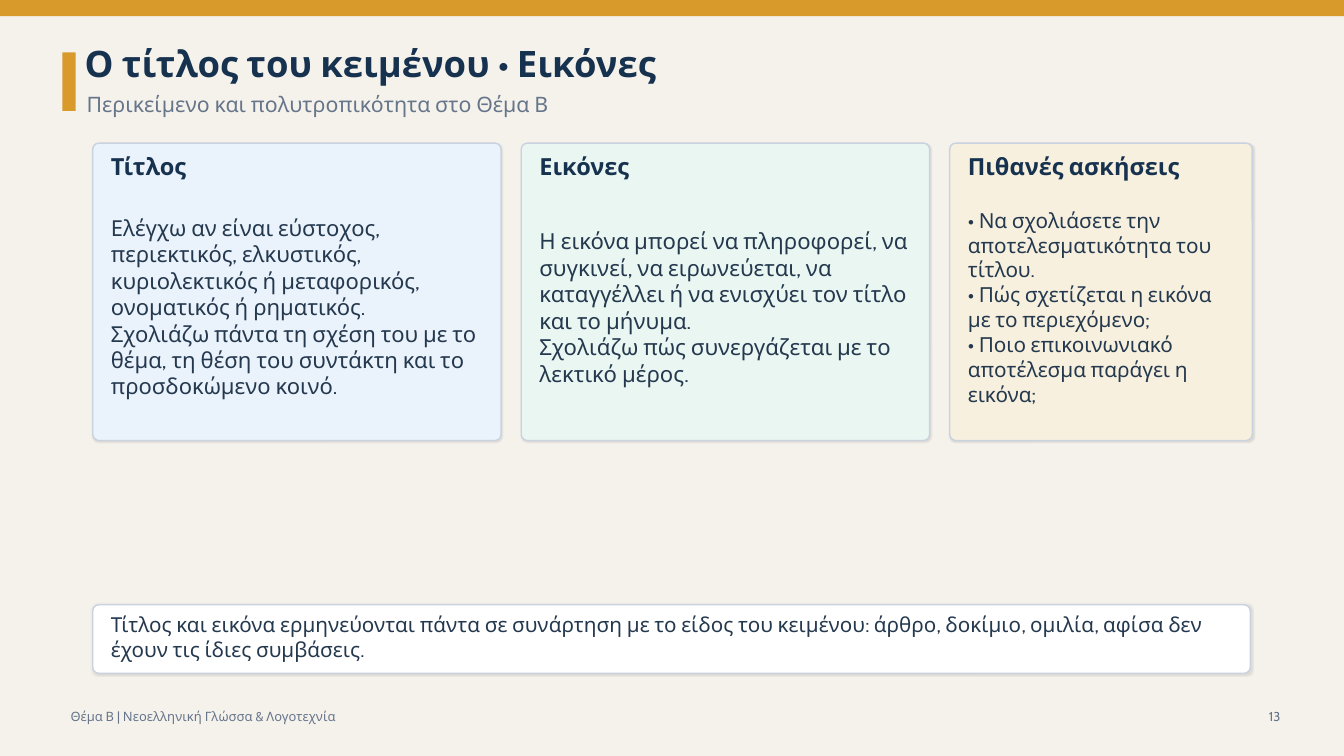
from lxml import etree
from pptx import Presentation
from pptx.dml.color import RGBColor
from pptx.enum.shapes import MSO_SHAPE as Shape
from pptx.enum.text import MSO_ANCHOR as Anchor, PP_ALIGN as Align
from pptx.oxml.ns import qn
from pptx.util import Pt

PX = 9144  # 100 px to the inch
FONT = "Cabin"

PAPER = RGBColor(0xF5, 0xF2, 0xEC)
GOLD = RGBColor(0xD8, 0x9A, 0x2B)
NAVY = RGBColor(0x16, 0x32, 0x4F)
INK = RGBColor(0x24, 0x38, 0x4E)
GREY = RGBColor(0x66, 0x75, 0x8A)
BORDER = RGBColor(0xC9, 0xD3, 0xDF)
BLUE = RGBColor(0xEA, 0xF2, 0xFB)
GREEN = RGBColor(0xEA, 0xF6, 0xF1)
CREAM = RGBColor(0xF7, 0xF0, 0xDE)
WHITE = RGBColor(0xFF, 0xFF, 0xFF)

MARGIN, GAP, PAD, RADIUS = 92, 20, 18, 6
CARD_TOP, CARD_HEIGHT = 142, 295

# Width, fill, heading, body size, body paragraphs
CARDS = [
    (405, BLUE, "Τίτλος", 15.7, [
        "Ελέγχω αν είναι εύστοχος, περιεκτικός, ελκυστικός, κυριολεκτικός ή "
        "μεταφορικός, ονοματικός ή ρηματικός.",
        "Σχολιάζω πάντα τη σχέση του με το θέμα, τη θέση του συντάκτη και το "
        "προσδοκώμενο κοινό."]),
    (405, GREEN, "Εικόνες", 15.8, [
        "Η εικόνα μπορεί να πληροφορεί, να συγκινεί, να ειρωνεύεται, να "
        "καταγγέλλει ή να ενισχύει τον τίτλο και το μήνυμα.",
        "Σχολιάζω πώς συνεργάζεται με το λεκτικό μέρος."]),
    (300, CREAM, "Πιθανές ασκήσεις", 14.8, [
        "• Να σχολιάσετε την αποτελεσματικότητα του τίτλου.",
        "• Πώς σχετίζεται η εικόνα με το περιεχόμενο;",
        "• Ποιο επικοινωνιακό αποτέλεσμα παράγει η εικόνα;"]),
]


def emu(*lengths):
    return [length * PX for length in lengths]


def add_text(slide, box, *paragraphs, size, color, bold=False, align=Align.LEFT):
    frame = slide.shapes.add_textbox(*emu(*box)).text_frame
    frame.word_wrap = True
    frame.vertical_anchor = Anchor.MIDDLE
    frame.margin_left = frame.margin_right = 0
    frame.margin_top = frame.margin_bottom = 0
    for index, wording in enumerate(paragraphs):
        paragraph = frame.add_paragraph() if index else frame.paragraphs[0]
        paragraph.alignment = align
        run = paragraph.add_run()
        run.text = wording
        run.font.name = FONT
        run.font.size = Pt(size)
        run.font.bold = bold
        run.font.color.rgb = color


def add_bar(slide, box, fill):
    bar = slide.shapes.add_shape(Shape.RECTANGLE, *emu(*box))
    bar.shadow.inherit = False
    bar.fill.solid()
    bar.fill.fore_color.rgb = fill
    bar.line.fill.background()


def add_soft_shadow(panel):
    panel.shadow.inherit = False
    effects = panel.element.spPr.find(qn("a:effectLst"))
    shadow = etree.SubElement(effects, qn("a:outerShdw"), blurRad=str(Pt(1.2)),
                              dist=str(Pt(0.5)), dir="2700000",
                              algn="bl", rotWithShape="0")
    black = etree.SubElement(shadow, qn("a:srgbClr"), val="000000")
    etree.SubElement(black, qn("a:alpha"), val="10000")


def add_panel(slide, box, fill):
    panel = slide.shapes.add_shape(Shape.ROUNDED_RECTANGLE, *emu(*box))
    panel.adjustments[0] = RADIUS / min(box[2:])
    panel.fill.solid()
    panel.fill.fore_color.rgb = fill
    panel.line.color.rgb = BORDER
    panel.line.width = Pt(1)
    add_soft_shadow(panel)


def add_card(slide, left, width, fill, heading, size, body):
    add_panel(slide, (left, CARD_TOP, width, CARD_HEIGHT), fill)
    text_left, text_width = left + PAD, width - 2 * PAD
    add_text(slide, (text_left, CARD_TOP + 12, text_width, 22), heading,
             size=16.8, color=NAVY, bold=True)
    add_text(slide, (text_left, CARD_TOP + 42, text_width, CARD_HEIGHT - 54), *body,
             size=size, color=INK)


def main():
    deck = Presentation()
    deck.slide_width, deck.slide_height = emu(1333, 750)
    slide = deck.slides.add_slide(deck.slide_layouts[6])
    slide.background.fill.solid()
    slide.background.fill.fore_color.rgb = PAPER

    # Header
    add_bar(slide, (0, 0, 1333, 16), GOLD)
    add_bar(slide, (62, 52, 13, 58), GOLD)
    add_text(slide, (84, 42, 960, 40), "Ο τίτλος του κειμένου • Εικόνες",
             size=26, color=NAVY, bold=True)
    add_text(slide, (86, 92, 1080, 22), "Περικείμενο και πολυτροπικότητα στο Θέμα Β",
             size=15.2, color=GREY)

    # Footer
    add_text(slide, (70, 701, 490, 20), "Θέμα Β | Νεοελληνική Γλώσσα & Λογοτεχνία",
             size=9.2, color=GREY)
    add_text(slide, (1230, 701, 40, 20), "13", size=9.2, color=GREY, align=Align.RIGHT)

    # Cards
    left = MARGIN
    for width, *content in CARDS:
        add_card(slide, left, width, *content)
        left += width + GAP

    # Closing note
    add_panel(slide, (MARGIN, 600, 1148, 68), WHITE)
    add_text(slide, (MARGIN + PAD, 608, 1148 - 2 * PAD, 48),
             "Τίτλος και εικόνα ερμηνεύονται πάντα σε συνάρτηση με το είδος του "
             "κειμένου: άρθρο, δοκίμιο, ομιλία, αφίσα δεν έχουν τις ίδιες συμβάσεις.",
             size=14.7, color=INK)

    deck.save("out.pptx")


if __name__ == "__main__":
    main()
